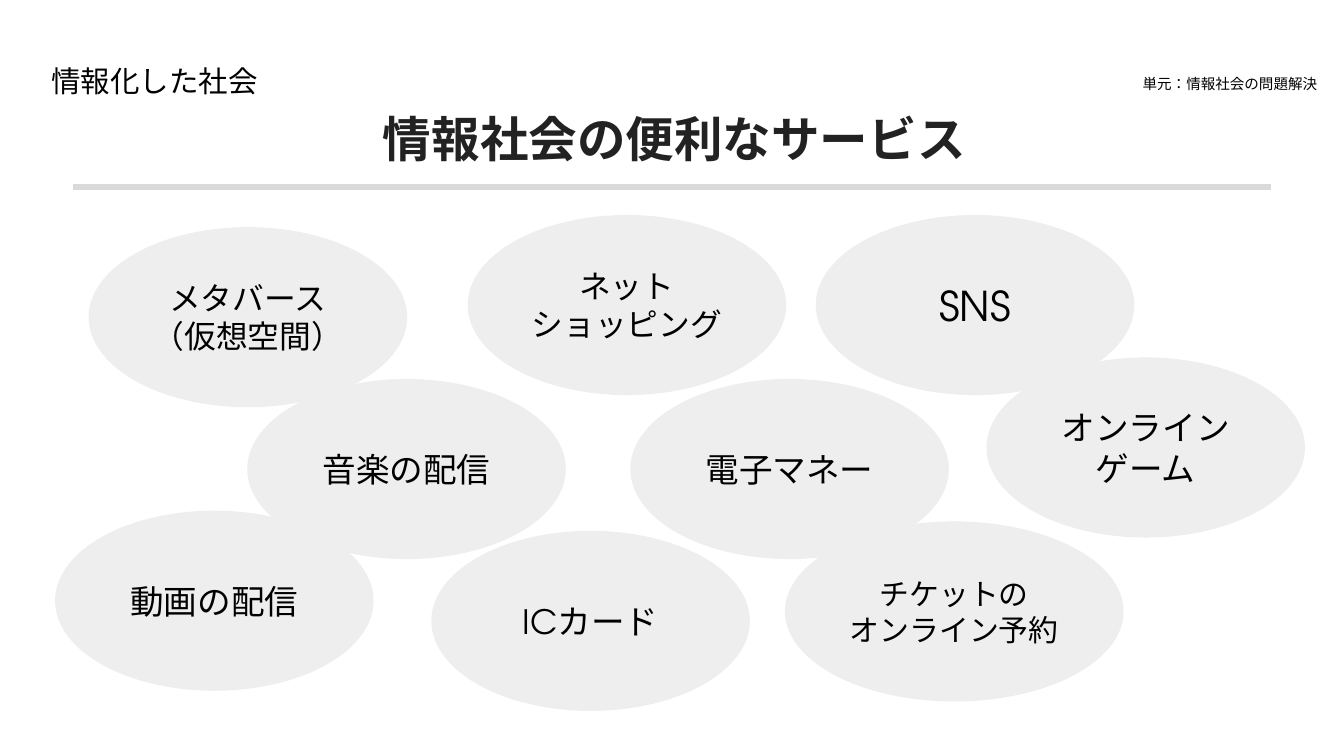
"""Build a slide showing convenient services of the information society."""
from pptx import Presentation
from pptx.dml.color import RGBColor
from pptx.enum.lang import MSO_LANGUAGE_ID
from pptx.enum.shapes import MSO_CONNECTOR, MSO_SHAPE
from pptx.enum.text import MSO_ANCHOR, MSO_AUTO_SIZE, PP_ALIGN
from pptx.oxml.ns import qn
from pptx.util import Inches, Pt

LEFT, CENTER, RIGHT = PP_ALIGN.LEFT, PP_ALIGN.CENTER, PP_ALIGN.RIGHT
TOP, MIDDLE, BOTTOM = MSO_ANCHOR.TOP, MSO_ANCHOR.MIDDLE, MSO_ANCHOR.BOTTOM
FIXED, GROW = MSO_AUTO_SIZE.NONE, MSO_AUTO_SIZE.SHAPE_TO_FIT_TEXT
ELLIPSE, STRAIGHT = MSO_SHAPE.OVAL, MSO_CONNECTOR.STRAIGHT
JAPANESE = MSO_LANGUAGE_ID.JAPANESE

FONT = "TeX Gyre Adventor"
COLORS = {"text": "000000", "heading": "222222", "oval": "EEEEEE", "rule": "D9D9D9"}


def write_text(shape, lines, size, align=CENTER, anchor=MIDDLE, fit=FIXED, color="text", bold=False):
    frame = shape.text_frame
    frame.text = "\n".join(lines)
    frame_format = {"word_wrap": True, "auto_size": fit, "vertical_anchor": anchor}
    frame_format.update({f"margin_{side}": Inches(0.1) for side in ("left", "right", "top", "bottom")})
    for name, value in frame_format.items():
        setattr(frame, name, value)
    font_format = {"name": FONT, "size": Pt(size), "bold": bold, "language_id": JAPANESE}
    for para in frame.paragraphs:
        para.alignment = align
        for span in para.runs:
            for name, value in font_format.items():
                setattr(span.font, name, value)
            span.font.color.rgb = RGBColor.from_string(COLORS[color])


deck = Presentation()
deck.slide_width, deck.slide_height = Inches(10), Inches(10 * 9 / 16)
page = deck.slides.add_slide(deck.slide_layouts.get_by_name("Title Only"))

title = page.shapes.title
title_place = {"left": 0.28, "top": 0.49, "width": 5.5, "height": 0.34}
for name, value in title_place.items():
    setattr(title, name, Inches(value))
write_text(title, ["情報化した社会"], 15.8, LEFT, BOTTOM)

unit = page.shapes.add_textbox(Inches(8.01), Inches(0.49), Inches(1.89), Inches(0.33))
write_text(unit, ["単元：情報社会の問題解決"], 7.8, RIGHT, TOP, GROW)

heading = page.shapes.add_textbox(Inches(0.24), Inches(0.72), Inches(9.56), Inches(0.61))
write_text(heading, ["情報社会の便利なサービス"], 26, color="heading", bold=True)

rule = page.shapes.add_connector(STRAIGHT, Inches(0.54), Inches(1.39), Inches(9.46), Inches(1.39))
rule.line.color.rgb = RGBColor.from_string(COLORS["rule"])
rule.line.width = Pt(3)
rule_properties = rule._element.spPr
rule_properties.append(rule_properties.makeelement(qn("a:effectLst"), {}))

services = [
    (0.66, 1.69, 2.37, 17, ["メタバース", "（仮想空間）"]),
    (3.48, 1.6, 2.37, 17, ["ネット", "ショッピング"]),
    (6.07, 1.6, 2.37, 22, ["SNS"]),
    (1.84, 2.82, 2.37, 18, ["音楽の配信"]),
    (4.69, 2.82, 2.37, 18, ["電子マネー"]),
    (7.34, 2.66, 2.37, 18, ["オンライン", "ゲーム"]),
    (0.41, 3.8, 2.37, 18, ["動画の配信"]),
    (3.21, 3.95, 2.37, 18, ["ICカード"]),
    (5.84, 3.88, 2.52, 16, ["チケットの", "オンライン予約"]),
]
for left, top, width, size, lines in services:
    oval = page.shapes.add_shape(ELLIPSE, Inches(left), Inches(top), Inches(width), Inches(1.34))
    oval.shadow.inherit = False
    oval.fill.solid()
    oval.fill.fore_color.rgb = RGBColor.from_string(COLORS["oval"])
    oval.line.fill.background()
    write_text(oval, lines, size)

deck.save("out.pptx")
